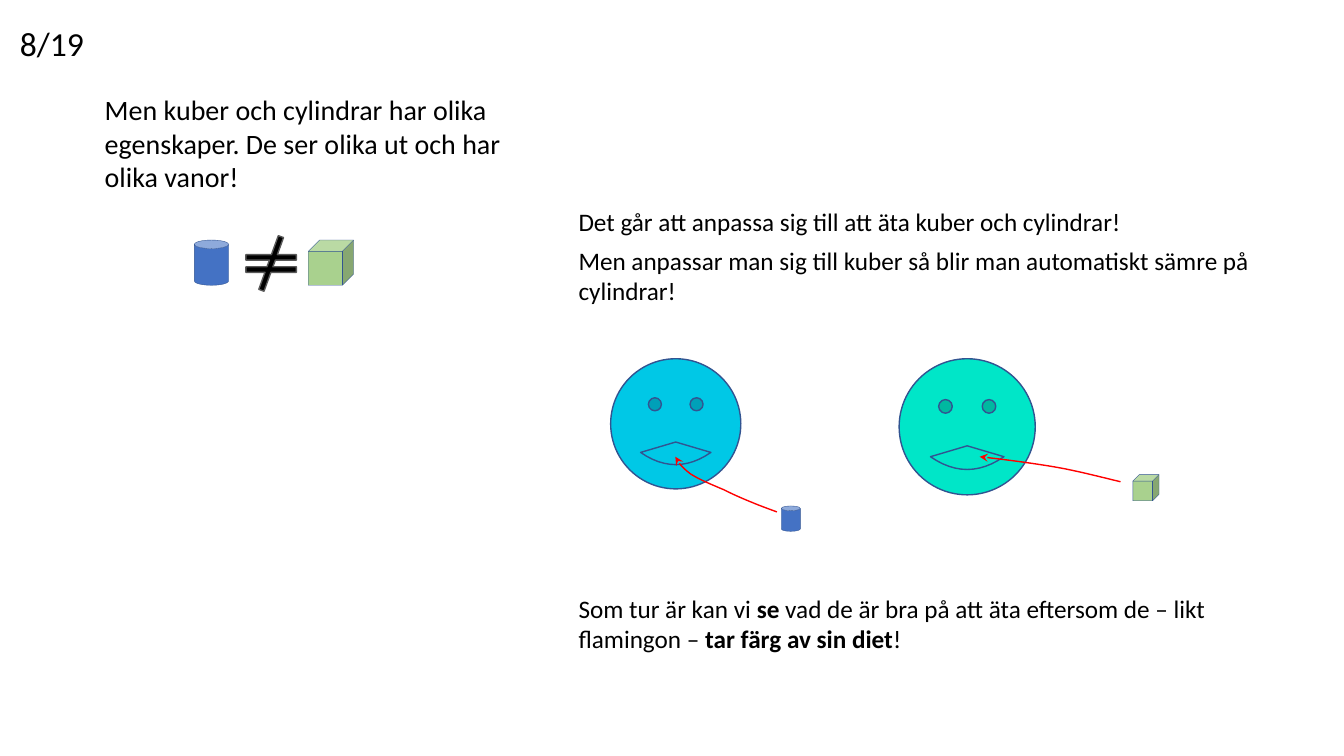
from dataclasses import dataclass

from lxml.etree import SubElement
from pptx import Presentation
from pptx.dml.color import RGBColor
from pptx.enum.shapes import MSO_SHAPE
from pptx.enum.text import MSO_AUTO_SIZE
from pptx.oxml.ns import qn
from pptx.shapes.base import BaseShape
from pptx.util import Cm, Pt

HUES = {
    "ink": "000000", "edge": "325491", "gray": "595959", "red": "FF0000",
    "can": "4472C4", "cube": "A9D18E",
    "blue": "00C8E6", "blue eye": "00A0B8",
    "green": "00E6C8", "green eye": "00B8A0",
}
STEPS = 12

Point = tuple[float, float]


@dataclass
class Note:
    """Text box in cm; each paragraph is a list of runs, every second one bold."""
    box: tuple[float, float, float, float]
    size: int
    paras: list[list[str]]
    wrap: bool = True


@dataclass
class Item:
    kind: MSO_SHAPE
    box: tuple[float, float, float, float]
    fill: str
    line: str = "edge"
    width: float = 0.25


@dataclass
class Eater:
    """A round face, the food it eats and the arrow from food to mouth."""
    left: float
    top: float
    size: float
    hue: str
    food: Item
    curve: list[Point]


NOTES = [
    Note((2.39, 2.21, 10.62, 2.82), 20,
         [["Men kuber och cylindrar har olika egenskaper. "
           "De ser olika ut och har olika vanor!"]]),
    Note((14.33, 5.08, 17.98, 2.77), 18,
         [["Det går att anpassa sig till att äta kuber och cylindrar!"],
          ["Men anpassar man sig till kuber så blir man automatiskt "
           "sämre på cylindrar!"]]),
    Note((14.33, 14.83, 16.69, 3.33), 18,
         [["Som tur är kan vi ", "se",
           " vad de är bra på att äta eftersom de – likt flamingon – ",
           "tar färg av sin diet", "!"]]),
    Note((0.25, 0.46, 2.13, 1.27), 24, [["8/19"]], wrap=False),
]

CUBE = Item(MSO_SHAPE.CUBE, (7.77, 6.05, 1.14, 1.14), "cube")
CAN = Item(MSO_SHAPE.CAN, (4.9, 6.05, 0.86, 1.14), "can")
UNLIKE = Item(MSO_SHAPE.MATH_NOT_EQUAL, (5.97, 5.94, 1.73, 1.4),
              "ink", "gray", 1)

EATERS = [
    Eater(15.39, 9.04, 3.28, "blue",
          Item(MSO_SHAPE.CAN, (19.69, 12.75, 0.48, 0.64), "can"),
          [(19.58, 12.9), (19.1, 12.73), (18.59, 12.52), (18.24, 12.34),
           (17.88, 12.19), (17.6, 12.07), (17.4, 11.94),
           (17.2, 11.79), (17.09, 11.66), (17.02, 11.51)]),
    Eater(22.66, 9.04, 3.43, "green",
          Item(MSO_SHAPE.CUBE, (28.55, 11.96, 0.66, 0.66), "cube"),
          [(28.24, 12.14), (27.69, 12.01), (27.13, 11.86), (26.54, 11.76),
           (25.93, 11.66), (25.32, 11.58), (24.69, 11.51)]),
]

# Parts of a face, as shares of its size
EYES = (0.34, 0.66)
EYE_TOP = 0.35
EYE_SIZE = 0.1
LIP = [(0.23, 0.72), (0.41, 0.845), (0.59, 0.845), (0.77, 0.72)]
PEAK = (0.5, 0.64)


def color(name: str) -> RGBColor:
    return RGBColor.from_string(HUES[name])


def style(shape: BaseShape, fill: str | None, line: str, width: float) -> None:
    shape.shadow.inherit = False
    if fill:
        shape.fill.solid()
        shape.fill.fore_color.rgb = color(fill)
    else:
        shape.fill.background()
    shape.line.color.rgb = color(line)
    shape.line.width = Pt(width)


def draw_item(shapes, item: Item) -> BaseShape:
    shape = shapes.add_shape(item.kind, *map(Cm, item.box))
    style(shape, item.fill, item.line, item.width)
    return shape


def trace(nodes: list[Point]) -> list[Point]:
    """Sample a chain of cubic curves that share their end points."""
    dots = [nodes[0]]
    for start in range(0, len(nodes) - 1, 3):
        part = nodes[start:start + 4]
        for step in range(1, STEPS + 1):
            t = step / STEPS
            rates = ((1 - t) ** 3, 3 * t * (1 - t) ** 2,
                     3 * t * t * (1 - t), t ** 3)
            dots.append((sum(r * x for r, (x, _) in zip(rates, part)),
                         sum(r * y for r, (_, y) in zip(rates, part))))
    return dots


def draw_path(shapes, dots: list[Point], line: str, close: bool) -> BaseShape:
    first, *rest = [(Cm(x), Cm(y)) for x, y in dots]
    pen = shapes.build_freeform(*first)
    pen.add_line_segments(rest, close=close)
    shape = pen.convert_to_shape()
    style(shape, None, line, 1)
    return shape


def draw_eater(shapes, eater: Eater) -> None:
    group = shapes.add_group_shape().shapes
    draw_item(group, eater.food)

    size = eater.size
    head = (eater.left, eater.top, size, size)
    draw_item(group, Item(MSO_SHAPE.OVAL, head, eater.hue, width=1))
    eye = EYE_SIZE * size
    for across in EYES:
        box = (eater.left + across * size - eye / 2,
               eater.top + EYE_TOP * size - eye / 2, eye, eye)
        draw_item(group, Item(MSO_SHAPE.OVAL, box, eater.hue + " eye", width=1))
    mouth = [(eater.left + x * size, eater.top + y * size)
             for x, y in trace(LIP) + [PEAK]]
    draw_path(group, mouth, "edge", close=True)

    arrow = draw_path(group, trace(eater.curve), "red", close=False)
    SubElement(arrow.line._get_or_add_ln(), qn("a:tailEnd"), type="stealth")


def draw_note(shapes, note: Note) -> None:
    frame = shapes.add_textbox(*map(Cm, note.box)).text_frame
    frame.word_wrap = note.wrap
    frame.auto_size = MSO_AUTO_SIZE.SHAPE_TO_FIT_TEXT
    for index, texts in enumerate(note.paras):
        para = frame.add_paragraph() if index else frame.paragraphs[0]
        if index:
            para.space_before = Pt(6)
        for place, text in enumerate(texts):
            run = para.add_run()
            run.text = text
            run.font.name = "Calibri"
            run.font.size = Pt(note.size)
            run.font.bold = place % 2 == 1
            run.font.color.rgb = color("ink")


def main() -> None:
    deck = Presentation()
    deck.slide_width, deck.slide_height = Cm(33.87), Cm(19.05)
    shapes = deck.slides.add_slide(deck.slide_layouts[6]).shapes

    draw_item(shapes, CUBE)
    draw_item(shapes, CAN)
    sign = draw_item(shapes, UNLIKE)
    for index, value in enumerate((0.1, 66, 0.12)):
        sign.adjustments[index] = value
    for eater in EATERS:
        draw_eater(shapes, eater)
    for note in NOTES:
        draw_note(shapes, note)
    deck.save("out.pptx")


if __name__ == "__main__":
    main()
